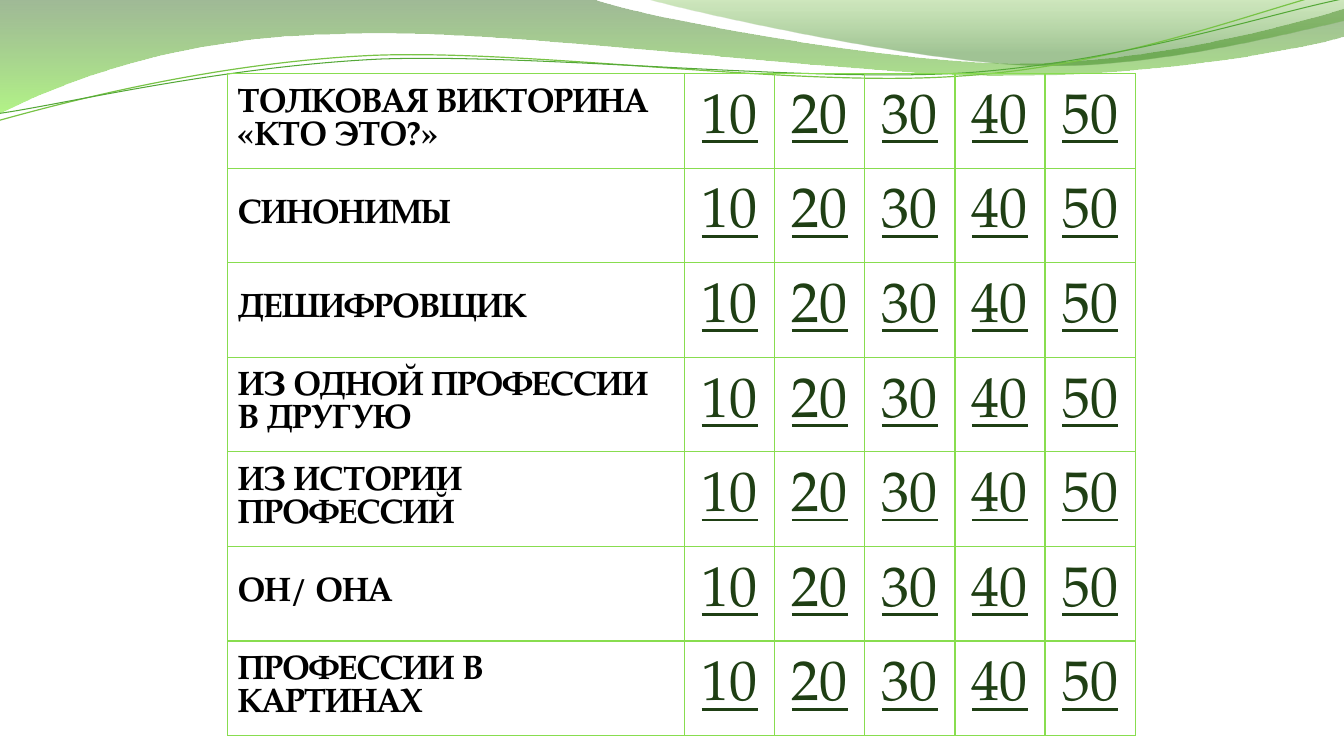
from lxml import etree
from pptx import Presentation
from pptx.dml.color import RGBColor
from pptx.enum.text import MSO_ANCHOR, PP_ALIGN
from pptx.oxml.ns import qn
from pptx.util import Inches, Pt

MIDDLE = MSO_ANCHOR.MIDDLE
LEFT, CENTER = PP_ALIGN.LEFT, PP_ALIGN.CENTER

BLACK = RGBColor(0x00, 0x00, 0x00)
PINE = RGBColor(0x1F, 0x3F, 0x14)
GRID = RGBColor(0x88, 0xDD, 0x4F)
MOSS = RGBColor(0x2C, 0x64, 0x18)
LIME = RGBColor(0x74, 0xEC, 0x24)
LEAF = RGBColor(0x62, 0xB3, 0x2B)
FERN = RGBColor(0x30, 0x7E, 0x15)
LIGHT = RGBColor(0x78, 0xC3, 0x46)
DARK = RGBColor(0x54, 0xA8, 0x38)

FONT = "TeX Gyre Pagella"
TOPICS = [
    "ТОЛКОВАЯ ВИКТОРИНА «КТО ЭТО?»",
    "СИНОНИМЫ",
    "ДЕШИФРОВЩИК",
    "ИЗ ОДНОЙ ПРОФЕССИИ В ДРУГУЮ",
    "ИЗ ИСТОРИИ ПРОФЕССИЙ",
    "ОН/ ОНА",
    "ПРОФЕССИИ В КАРТИНАХ",
]
POINTS = [10, 20, 30, 40, 50]
WIDTH, HEIGHT, FIRST = 9, 6.57, 4.53
TILT = 357.3

# Outlines in inches: a pair is a straight step, six numbers are a curve
BAND = [
    (0, 0), (5.87, -0.01),
    (6.34, 0.17, 8.85, 0.63, 10.11, 0.63),
    (11.38, 0.63, 12.78, 0.26, 13.33, 0.09),
    (13.35, 0.36),
    (13.11, 0.44, 11.6, 0.76, 9.94, 0.75),
    (8.29, 0.75, 5.09, 0.28, 3.43, 0.34),
    (1.72, 0.36, 0.61, 0.83, -0.01, 1.13),
]
CREST = [
    (6.39, -0.01),
    (6.79, 0.11, 9.09, 0.62, 10.25, 0.65),
    (11.41, 0.69, 12.82, 0.32, 13.33, 0.21),
    (13.33, 0),
]
UPPER = [
    (-0.03, 0.88),
    (0.63, 0.73, 2.11, 0.41, 3.69, 0.41),
    (5.28, 0.42, 7.88, 0.93, 9.49, 0.89),
    (11.09, 0.87, 12.54, 0.36, 13.33, 0.21),
]
LOWER = [
    (-0.02, 0.81),
    (0.62, 0.75, 2.18, 0.45, 3.78, 0.45),
    (5.37, 0.47, 7.95, 0.88, 9.54, 0.86),
    (11.14, 0.83, 12.56, 0.42, 13.36, 0.3),
]


def add_path(slide, outline, close):
    """Join the end points, then bend the steps that are curves."""
    dots = [(Inches(part[-2]), Inches(part[-1])) for part in outline]
    builder = slide.shapes.build_freeform(*dots[0])
    builder.add_line_segments(dots[1:], close=close)
    shape = builder.convert_to_shape()
    shape.shadow.inherit = False
    steps = list(shape.element.iter(qn("a:lnTo")))
    for step, part in zip(steps, outline[1:]):
        if len(part) == 2:
            continue
        curve = etree.Element(qn("a:cubicBezTo"))
        for x, y in zip(part[::2], part[1::2]):
            etree.SubElement(curve, qn("a:pt"),
                             x=str(Inches(x) - shape.left),
                             y=str(Inches(y) - shape.top))
        step.getparent().replace(step, curve)
    return shape


def add_wave(slide, outline, stops):
    """Filled wave; each stop is position, colour, opacity in percent."""
    shape = add_path(slide, outline, True)
    shape.line.fill.background()
    shape.fill.gradient()
    shape.fill.gradient_angle = 270
    for stop, (place, color, opacity) in zip(shape.fill.gradient_stops, stops):
        stop.position = place
        stop.color.rgb = color
    tints = shape.element.spPr.iter(qn("a:srgbClr"))
    for tint, (place, color, opacity) in zip(tints, stops):
        etree.SubElement(tint, qn("a:alpha"), val=str(opacity * 1000))


def add_curve(slide, outline, color, width):
    shape = add_path(slide, outline, False)
    shape.rotation = TILT
    shape.fill.background()
    shape.line.color.rgb = color
    shape.line.width = Pt(width)


def set_border(cell):
    props = cell._tc.get_or_add_tcPr()
    for index, side in enumerate(("a:lnL", "a:lnR", "a:lnT", "a:lnB")):
        line = etree.Element(qn(side), w=str(Pt(1)))
        fill = etree.SubElement(line, qn("a:solidFill"))
        etree.SubElement(fill, qn("a:srgbClr"), val=str(GRID))
        props.insert(index, line)


def fill_cell(cell, text, size, color, align, label):
    cell.fill.background()
    set_border(cell)
    cell.vertical_anchor = MIDDLE
    cell.text = text
    para = cell.text_frame.paragraphs[0]
    para.alignment = align
    font = para.font
    font.name, font.size = FONT, Pt(size)
    font.color.rgb = color
    font.bold, font.underline = label, not label


def add_board(slide):
    frame = slide.shapes.add_table(
        len(TOPICS), len(POINTS) + 1,
        Inches(2.26), Inches(0.73), Inches(WIDTH), Inches(HEIGHT))
    table = frame.table
    table.first_row = table.horz_banding = False
    narrow = (WIDTH - FIRST) / len(POINTS)
    for index, column in enumerate(table.columns):
        column.width = Inches(narrow if index else FIRST)
    for row, topic in enumerate(TOPICS):
        fill_cell(table.cell(row, 0), topic, 24, BLACK, LEFT, True)
        for col, points in enumerate(POINTS, 1):
            fill_cell(table.cell(row, col), str(points), 40, PINE, CENTER, False)


def main():
    deck = Presentation()
    deck.slide_width, deck.slide_height = Inches(13.33), Inches(7.5)
    slide = deck.slides.add_slide(deck.slide_layouts[6])

    # Green waves along the top
    add_wave(slide, BAND, [(0, MOSS, 45), (1, LIME, 55)])
    add_wave(slide, CREST, [(0, LEAF, 30), (0.8, FERN, 45)])
    add_curve(slide, UPPER, LIGHT, 0.85)
    add_curve(slide, LOWER, DARK, 0.75)

    # Quiz board
    add_board(slide)
    deck.save("out.pptx")


if __name__ == "__main__":
    main()
